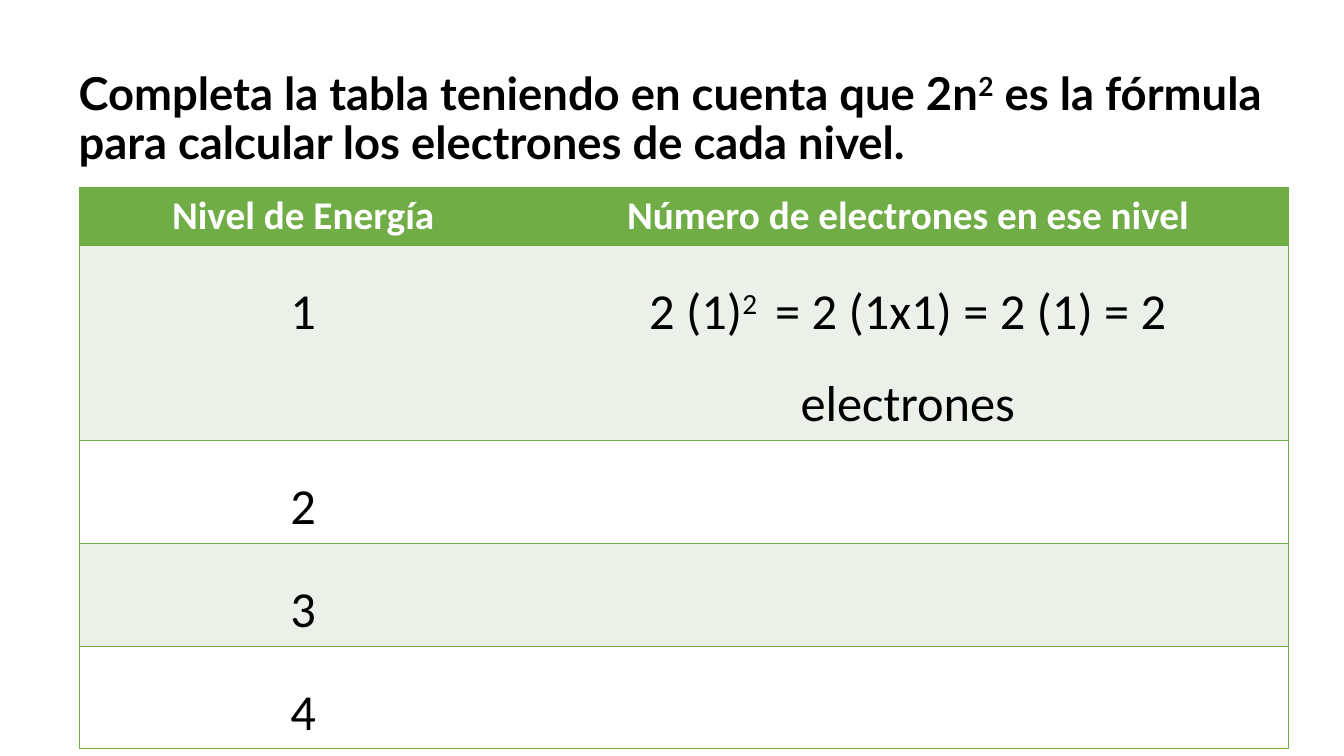
from lxml.etree import SubElement
from pptx import Presentation
from pptx.dml.color import RGBColor
from pptx.enum.text import MSO_ANCHOR, MSO_AUTO_SIZE, PP_ALIGN
from pptx.oxml.ns import qn
from pptx.util import Inches, Pt

COLORS = {"green": "70AD47", "tint": "EBF1E9", "white": "FFFFFF", "black": "000000"}
WIDE, HIGH = Inches(13.33), Inches(7.5)
TITLE = [
    ("Completa la tabla teniendo en cuenta que 2n", False),
    ("2", True),
    (" es la fórmula para calcular los electrones de cada nivel.", False),
]
HEADS = ["Nivel de Energía", "Número de electrones en ese nivel"]
ANSWER = [("2 (1)", False), ("2 ", True), (" = 2 (1x1) = 2 (1) = 2 electrones", False)]
ROWS = [HEADS, ["1", ANSWER], ["2", ""], ["3", ""], ["4", ""]]
COLS = [0.37, 0.63]
HEIGHTS = [0.57, 1.93, 1.02, 1.02, 1.02]


def share(x, y, w, h):
    """Turn shares of the slide into a box of lengths."""
    return int(x * WIDE), int(y * HIGH), int(w * WIDE), int(h * HIGH)


def write(frame, text, size, font="Calibri", color="black", bold=False,
          align=PP_ALIGN.CENTER, space=1.0):
    """Write a string, or pairs of text and superscript flag, into a frame."""
    para = frame.paragraphs[0]
    para.alignment, para.line_spacing = align, space
    for part, raised in [(text, False)] if isinstance(text, str) else text:
        run = para.add_run()
        run.text = part
        run.font.size, run.font.name, run.font.bold = Pt(size), font, bold
        run.font.color.rgb = RGBColor.from_string(COLORS[color])
        if raised:
            run._r.get_or_add_rPr().set("baseline", "30000")


def edge(cell, sides):
    """Draw green lines on the given sides of a cell and clear the others."""
    props = cell._tc.get_or_add_tcPr()
    for side in "LRTB":
        line = SubElement(props, qn(f"a:ln{side}"), w=str(Pt(1)))
        if side in sides:
            fill = SubElement(line, qn("a:solidFill"))
            SubElement(fill, qn("a:srgbClr"), val=COLORS["green"])
        else:
            SubElement(line, qn("a:noFill"))


def head(slide, box):
    """Place the title in its box."""
    title = slide.shapes.title
    title.left, title.top, title.width, title.height = box
    frame = title.text_frame
    frame.word_wrap, frame.auto_size = True, MSO_AUTO_SIZE.NONE
    frame.vertical_anchor = MSO_ANCHOR.MIDDLE
    frame.margin_top = Inches(0.2)
    write(frame, TITLE, 32.4, font="Lato", bold=True, align=PP_ALIGN.LEFT, space=0.9)


def levels(slide, box):
    """Place the table of energy levels in its box."""
    table = slide.shapes.add_table(len(ROWS), len(COLS), *box).table
    for col, part in zip(table.columns, COLS):
        col.width = int(box[2] * part)
    for row, part in zip(table.rows, HEIGHTS):
        row.height = int(box[3] * part / sum(HEIGHTS))
    for r, texts in enumerate(ROWS):
        for c, text in enumerate(texts):
            cell = table.cell(r, c)
            edge(cell, "RTB" if c else "LTB")
            shade = "green" if r == 0 else "tint" if r % 2 else "white"
            cell.fill.solid()
            cell.fill.fore_color.rgb = RGBColor.from_string(COLORS[shade])
            cell.margin_left = cell.margin_right = Inches(0.13)
            if text and r == 0:
                write(cell.text_frame, text, 28, color="white", bold=True)
            elif text:
                write(cell.text_frame, text, 36, space=1.5)


def main():
    """Build and save the slide."""
    deck = Presentation()
    deck.slide_width, deck.slide_height = WIDE, HIGH
    slide = deck.slides.add_slide(deck.slide_layouts[5])
    head(slide, share(0.051, 0.07, 0.9, 0.157))
    levels(slide, share(0.059, 0.248, 0.9, 0.741))
    deck.save("out.pptx")


if __name__ == "__main__":
    main()
